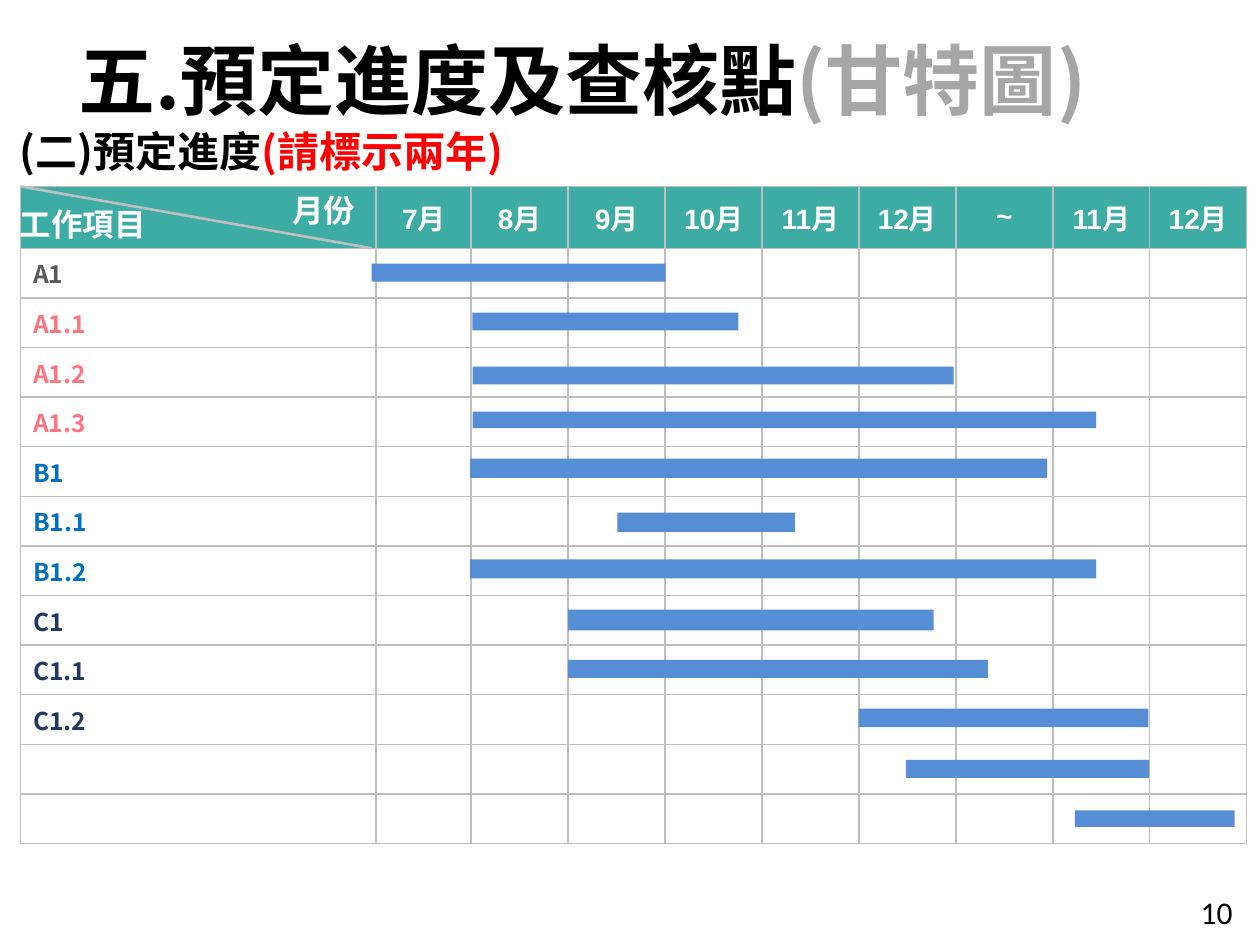
from pptx import Presentation
from pptx.dml.color import RGBColor
from pptx.enum import shapes, text
from pptx.oxml.ns import qn
from pptx.util import Pt
from lxml import etree

CJK = "Noto Sans CJK SC"
GRID = "BFBFBF"
TEAL = "3CACA5"
BLUE = "558ED5"
MONTHS = ["7月", "8月", "9月", "10月", "11月", "12月", "~", "11月", "12月"]
TASKS = [
    ("A1", "595959"), ("A1.1", "FF757F"), ("A1.2", "FF757F"), ("A1.3", "FF757F"),
    ("B1", "0070C0"), ("B1.1", "0070C0"), ("B1.2", "0070C0"),
    ("C1", "203864"), ("C1.1", "203864"), ("C1.2", "203864"), ("", "203864"), ("", "203864"),
]
BARS = [
    (212.4, 150.7, 168, 10.3), (270, 178.6, 152, 10.2), (270, 209.5, 275, 10.2),
    (270, 235.2, 356.4, 9.5), (268.6, 262.1, 329.8, 11), (352.8, 293, 101.5, 11),
    (268.6, 319.7, 357.8, 10.8), (324.7, 348.3, 208.8, 12), (324.7, 377.1, 239.8, 10.3),
    (490.7, 405, 165.6, 10.6), (517.7, 434.3, 139, 10.2), (614.2, 463, 91.4, 9.5),
]


def color(value):
    return RGBColor.from_string(value)


def set_font(font, size, name, fill, bold=True):
    font.size = Pt(size)
    font.name = name
    font.bold = bold
    font.color.rgb = color(fill)
    east = etree.SubElement(font._element, qn("a:ea"))
    east.set("typeface", CJK)


def write(para, words, size, name, fill, bold=True):
    para.add_run().text = words
    set_font(para.font, size, name, fill, bold)


def write_spans(para, spans, size):
    for words, fill in spans:
        span = para.add_run()
        span.text = words
        set_font(span.font, size, CJK, fill)


def add_label(page, left, top, width, height):
    box = page.shapes.add_textbox(Pt(left), Pt(top), Pt(width), Pt(height))
    box.text_frame.word_wrap = True
    return box.text_frame.paragraphs[0]


def add_title(page):
    title = page.shapes.title
    title.left, title.top, title.width, title.height = Pt(37.4), Pt(-7.2), Pt(644.4), Pt(77.8)
    frame = title.text_frame
    frame.auto_size = text.MSO_AUTO_SIZE.NONE
    frame.vertical_anchor = text.MSO_ANCHOR.MIDDLE
    para = frame.paragraphs[0]
    para.alignment = text.PP_ALIGN.LEFT
    para.line_spacing = 1.5
    write_spans(para, [("五.預定進度及查核點", "000000"), ("(甘特圖)", "A6A6A6")], 44)


def add_borders(cell):
    props = cell._tc.get_or_add_tcPr()
    for index, side in enumerate(("a:lnL", "a:lnR", "a:lnT", "a:lnB")):
        line = etree.Element(qn(side), w=str(Pt(1)))
        fill = etree.SubElement(line, qn("a:solidFill"))
        etree.SubElement(fill, qn("a:srgbClr"), val=GRID)
        props.insert(index, line)


def style_cell(cell, fill=None):
    cell.margin_top = cell.margin_bottom = 0
    cell.vertical_anchor = text.MSO_ANCHOR.MIDDLE
    if fill:
        cell.fill.solid()
        cell.fill.fore_color.rgb = color(fill)
    else:
        cell.fill.background()
    add_borders(cell)


def add_schedule(page):
    rows, columns = len(TASKS) + 1, len(MONTHS) + 1
    frame = page.shapes.add_table(rows, columns, Pt(11.7), Pt(106.5), Pt(700.8), Pt(375.6))
    table = frame.table
    for index, column in enumerate(table.columns):
        column.width = Pt({0: 203.3, 1: 54.3}.get(index, 55.4))
    for index, row in enumerate(table.rows):
        row.height = Pt(28.35 if index else 35.4)
        for cell in row.cells:
            style_cell(cell, None if index else TEAL)
    for index, month in enumerate(MONTHS, 1):
        para = table.cell(0, index).text_frame.paragraphs[0]
        para.alignment = text.PP_ALIGN.CENTER
        write(para, month, 16, "Arial", "FFFFFF")
    for index, (task, fill) in enumerate(TASKS, 1):
        if task:
            write(table.cell(index, 0).text_frame.paragraphs[0], task, 14, CJK, fill)


def add_bar(page, left, top, width, height):
    bar = page.shapes.add_shape(
        shapes.MSO_SHAPE.RECTANGLE, Pt(left), Pt(top), Pt(width), Pt(height))
    bar.shadow.inherit = False
    bar.fill.solid()
    bar.fill.fore_color.rgb = color(BLUE)
    bar.line.fill.background()


def add_diagonal(page):
    line = page.shapes.add_connector(
        shapes.MSO_CONNECTOR.STRAIGHT, Pt(11.7), Pt(106.5), Pt(212.4), Pt(141.9))
    line.line.color.rgb = color(GRID)
    line.line.width = Pt(1.5)
    etree.SubElement(line._element.spPr, qn("a:effectLst"))


def main():
    deck = Presentation()
    deck.slide_width, deck.slide_height = Pt(720), Pt(540)
    page = deck.slides.add_slide(deck.slide_layouts[5])
    add_title(page)
    add_schedule(page)
    add_diagonal(page)
    for bar in BARS:
        add_bar(page, *bar)
    write(add_label(page, 160, 105.8, 59.8, 29), "月份", 18, "Arial", "FFFFFF")
    write(add_label(page, 4.3, 113.8, 105.8, 29), "工作項目", 18, "Arial", "FFFFFF")
    write_spans(add_label(page, 4.3, 68.4, 609.8, 36),
                [("(二)預定進度", "000000"), ("(請標示兩年)", "FF0000")], 24)
    write(add_label(page, 679, 506.9, 41, 29), "10", 18, "Calibri", "000000", False)
    deck.save("out.pptx")


if __name__ == "__main__":
    main()
